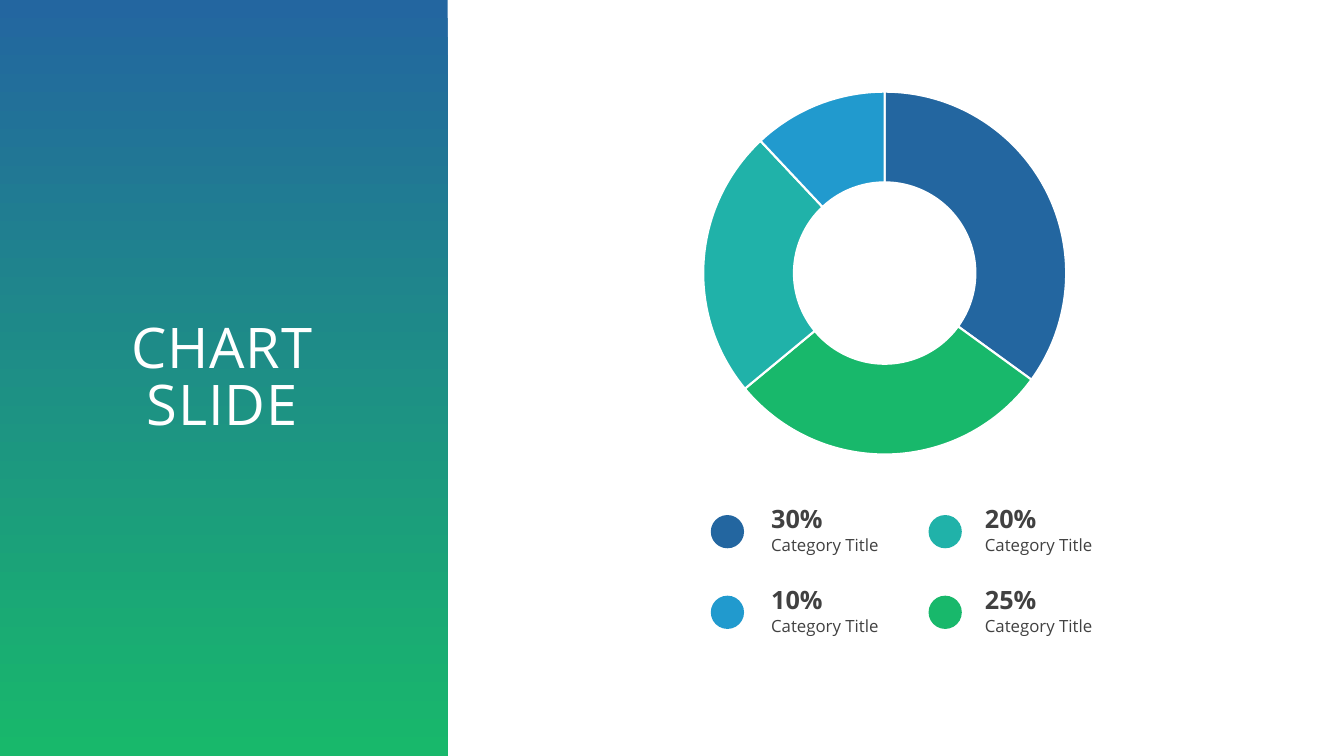
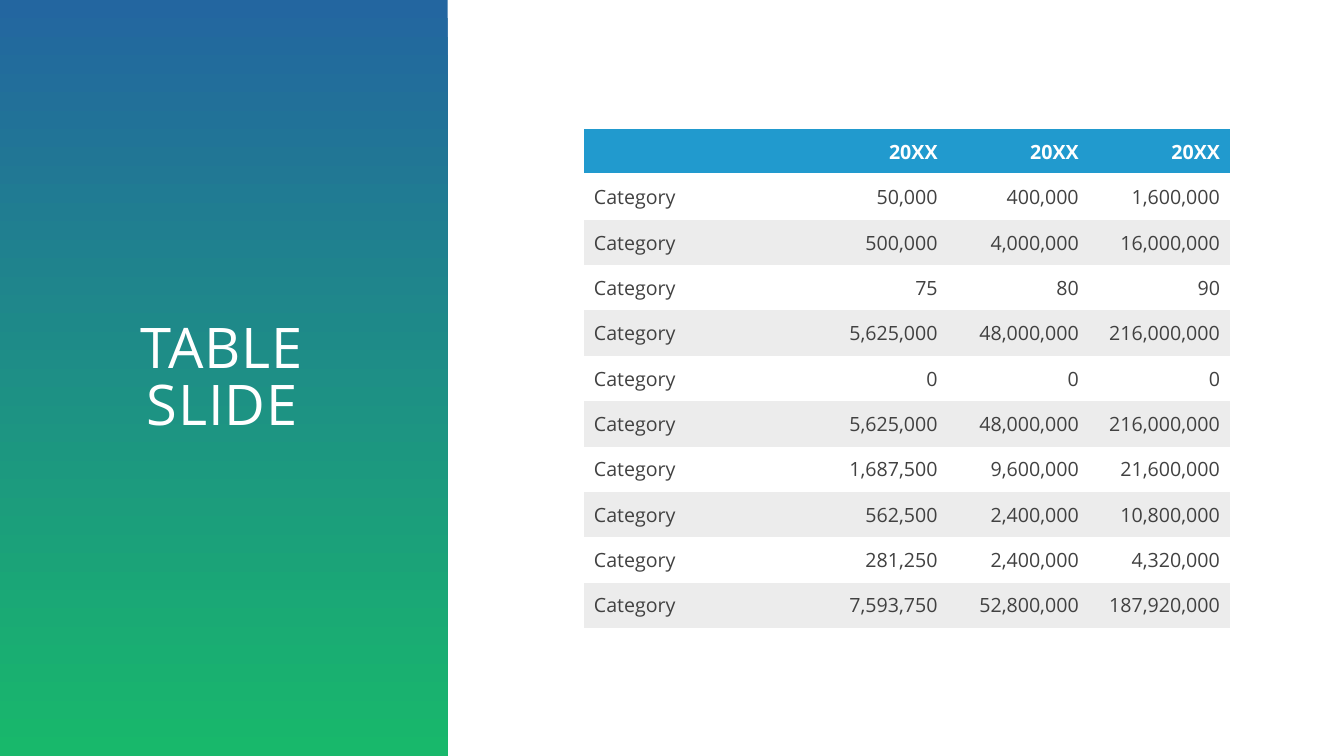
"""Build a chart slide and a table slide that share a gradient title panel."""
from dataclasses import dataclass

from lxml.etree import SubElement
from pptx import Presentation
from pptx.chart.data import CategoryChartData
from pptx.dml.color import RGBColor
from pptx.enum.chart import XL_CHART_TYPE
from pptx.enum.shapes import MSO_SHAPE
from pptx.enum.text import MSO_ANCHOR, PP_ALIGN
from pptx.oxml import parse_xml
from pptx.oxml.ns import nsdecls, qn
from pptx.util import Inches, Pt


@dataclass(frozen=True)
class Theme:
    """Colours, fonts and type sizes of the deck."""
    navy: str = "2366A0"
    green: str = "18B86B"
    teal: str = "20B2A9"
    sky: str = "219ACE"
    ink: str = "414141"
    white: str = "FFFFFF"
    stripe: str = "ECECEC"
    font: str = "Open Sans"
    chart_font: str = "Calibri"
    title_size: int = 40
    value_size: int = 18
    table_size: int = 14
    label_size: int = 12
    chart_size: int = 10


THEME = Theme()
NO_TABLE_STYLE = "{2D5ABB26-0587-4C30-8999-92F81FD0307C}"

SLICES = [("1", 35, THEME.navy), ("2", 29, THEME.green), ("3", 24, THEME.teal), ("4", 12, THEME.sky)]
LEGEND = [
    [("30%", "Category Title", THEME.navy), ("20%", "Category Title", THEME.teal)],
    [("10%", "Category Title", THEME.sky), ("25%", "Category Title", THEME.green)],
]
LEGEND_COLUMNS = [(7.05, 7.55), (9.21, 9.67)]
LEGEND_TOP, LEGEND_STEP = 5.0, 0.8

TABLE_ROWS = [
    ("", "20XX", "20XX", "20XX"),
    ("Category", "50,000", "400,000", "1,600,000"),
    ("Category", "500,000", "4,000,000", "16,000,000"),
    ("Category", "75", "80", "90"),
    ("Category", "5,625,000", "48,000,000", "216,000,000"),
    ("Category", "0", "0", "0"),
    ("Category", "5,625,000", "48,000,000", "216,000,000"),
    ("Category", "1,687,500", "9,600,000", "21,600,000"),
    ("Category", "562,500", "2,400,000", "10,800,000"),
    ("Category", "281,250", "2,400,000", "4,320,000"),
    ("Category", "7,593,750", "52,800,000", "187,920,000"),
]
COLUMN_WIDTHS = [2.21, 1.4, 1.4, 1.4]
ROW_HEIGHT = 0.45


def rgb(value):
    return RGBColor.from_string(value)


def style_font(font, size, colour, bold=False, name=THEME.font):
    font.name, font.size, font.bold = name, Pt(size), bold
    font.color.rgb = rgb(colour)


def add_filled_shape(page, kind, left, top, width, height):
    shape = page.shapes.add_shape(kind, Inches(left), Inches(top), Inches(width), Inches(height))
    shape.shadow.inherit = False
    shape.line.fill.background()
    return shape


def add_text(page, text, left, top, width, height, size, colour, bold=False, spacing=0.9):
    box = page.shapes.add_textbox(Inches(left), Inches(top), Inches(width), Inches(height))
    frame = box.text_frame
    frame.word_wrap = True
    frame.margin_top = frame.margin_bottom = Inches(0.03)
    frame.text = text
    para = frame.paragraphs[0]
    para.line_spacing = spacing
    style_font(para.runs[0].font, size, colour, bold)
    return box


def add_page(deck, title):
    page = deck.slides.add_slide(deck.slide_layouts[6])
    panel = add_filled_shape(page, MSO_SHAPE.RECTANGLE, 0, 0, 4.44, 7.5)
    panel.fill.gradient()
    panel.fill.gradient_angle = 270
    for stop, colour in zip(panel.fill.gradient_stops, (THEME.navy, THEME.green)):
        stop.color.rgb = rgb(colour)
    box = add_text(page, title, 0.58, 0.67, 3.25, 6.2, THEME.title_size, THEME.white, spacing=0.85)
    box.text_frame.vertical_anchor = MSO_ANCHOR.MIDDLE
    para = box.text_frame.paragraphs[0]
    para.alignment = PP_ALIGN.CENTER
    para.runs[0].font._element.set("spc", "70")
    return page


def set_plot_area(chart, x, y, w, h):
    plot_area = chart._chartSpace.chart.plotArea
    for old in plot_area.findall(qn("c:layout")):
        plot_area.remove(old)
    layout = parse_xml(f"<c:layout {nsdecls('c')}/>")
    manual = SubElement(layout, qn("c:manualLayout"))
    settings = [("layoutTarget", "inner"), ("xMode", "edge"), ("yMode", "edge"),
                ("x", x), ("y", y), ("w", w), ("h", h)]
    for tag, value in settings:
        SubElement(manual, qn(f"c:{tag}")).set("val", str(value))
    plot_area.insert(0, layout)


def add_doughnut(page):
    width, height, diameter = 3.89, 3.96, 3.6
    data = CategoryChartData()
    data.categories = [name for name, _, _ in SLICES]
    data.add_series("Series 1", [value for _, value, _ in SLICES])
    chart = page.shapes.add_chart(XL_CHART_TYPE.DOUGHNUT, Inches(6.83), Inches(0.73),
                                  Inches(width), Inches(height), data).chart
    chart.has_title = chart.has_legend = False
    style_font(chart.font, THEME.chart_size, THEME.white, name=THEME.chart_font)
    plot = chart.plots[0]
    plot.vary_by_categories = True
    plot._element.find(qn("c:holeSize")).set("val", "52")
    for index, (_, _, colour) in enumerate(SLICES):
        point = plot.series[0].points[index].format
        point.fill.solid()
        point.fill.fore_color.rgb = rgb(colour)
        point.line.color.rgb = rgb(THEME.white)
        point.line.width = Pt(1.5)
    share_x, share_y = diameter / width, diameter / height
    set_plot_area(chart, (1 - share_x) / 2, (1 - share_y) / 2, share_x, share_y)


def add_legend(page):
    for row, entries in enumerate(LEGEND):
        top = LEGEND_TOP + row * LEGEND_STEP
        for (dot_left, text_left), (value, label, colour) in zip(LEGEND_COLUMNS, entries):
            dot = add_filled_shape(page, MSO_SHAPE.OVAL, dot_left, top + 0.11, 0.33, 0.33)
            dot.fill.solid()
            dot.fill.fore_color.rgb = rgb(colour)
            add_text(page, value, text_left, top, 1.38, 0.32, THEME.value_size, THEME.ink, bold=True)
            add_text(page, label, text_left, top + 0.3, 1.38, 0.32, THEME.label_size, THEME.ink)


def add_bottom_border(cell, colour, points):
    border = parse_xml(
        f'<a:lnB {nsdecls("a")} w="{Pt(points)}"><a:solidFill>'
        f'<a:srgbClr val="{colour}"/></a:solidFill></a:lnB>')
    cell._tc.get_or_add_tcPr().insert(0, border)


def add_figures_table(page):
    frame = page.shapes.add_table(len(TABLE_ROWS), len(COLUMN_WIDTHS), Inches(5.79), Inches(1.28),
                                  Inches(sum(COLUMN_WIDTHS)), Inches(ROW_HEIGHT * len(TABLE_ROWS)))
    table = frame.table
    table._tbl.tblPr.find(qn("a:tableStyleId")).text = NO_TABLE_STYLE
    table.horz_banding = False
    for column, width in zip(table.columns, COLUMN_WIDTHS):
        column.width = Inches(width)
    for row, values in enumerate(TABLE_ROWS):
        header = row == 0
        table.rows[row].height = Inches(ROW_HEIGHT)
        band = THEME.sky if header else (THEME.white, THEME.stripe)[(row - 1) % 2]
        for column, value in enumerate(values):
            cell = table.cell(row, column)
            cell.fill.solid()
            cell.fill.fore_color.rgb = rgb(band)
            cell.vertical_anchor = MSO_ANCHOR.MIDDLE
            cell.text_frame.text = value
            para = cell.text_frame.paragraphs[0]
            para.alignment = PP_ALIGN.RIGHT if column else PP_ALIGN.LEFT
            for span in para.runs:
                style_font(span.font, THEME.table_size, THEME.white if header else THEME.ink, header)
            if header:
                add_bottom_border(cell, THEME.white, 2)


def main():
    deck = Presentation()
    deck.slide_width, deck.slide_height = Inches(13.33), Inches(7.5)
    chart_page = add_page(deck, "CHART SLIDE")
    add_doughnut(chart_page)
    add_legend(chart_page)
    add_figures_table(add_page(deck, "TABLE SLIDE"))
    deck.save("out.pptx")


if __name__ == "__main__":
    main()
